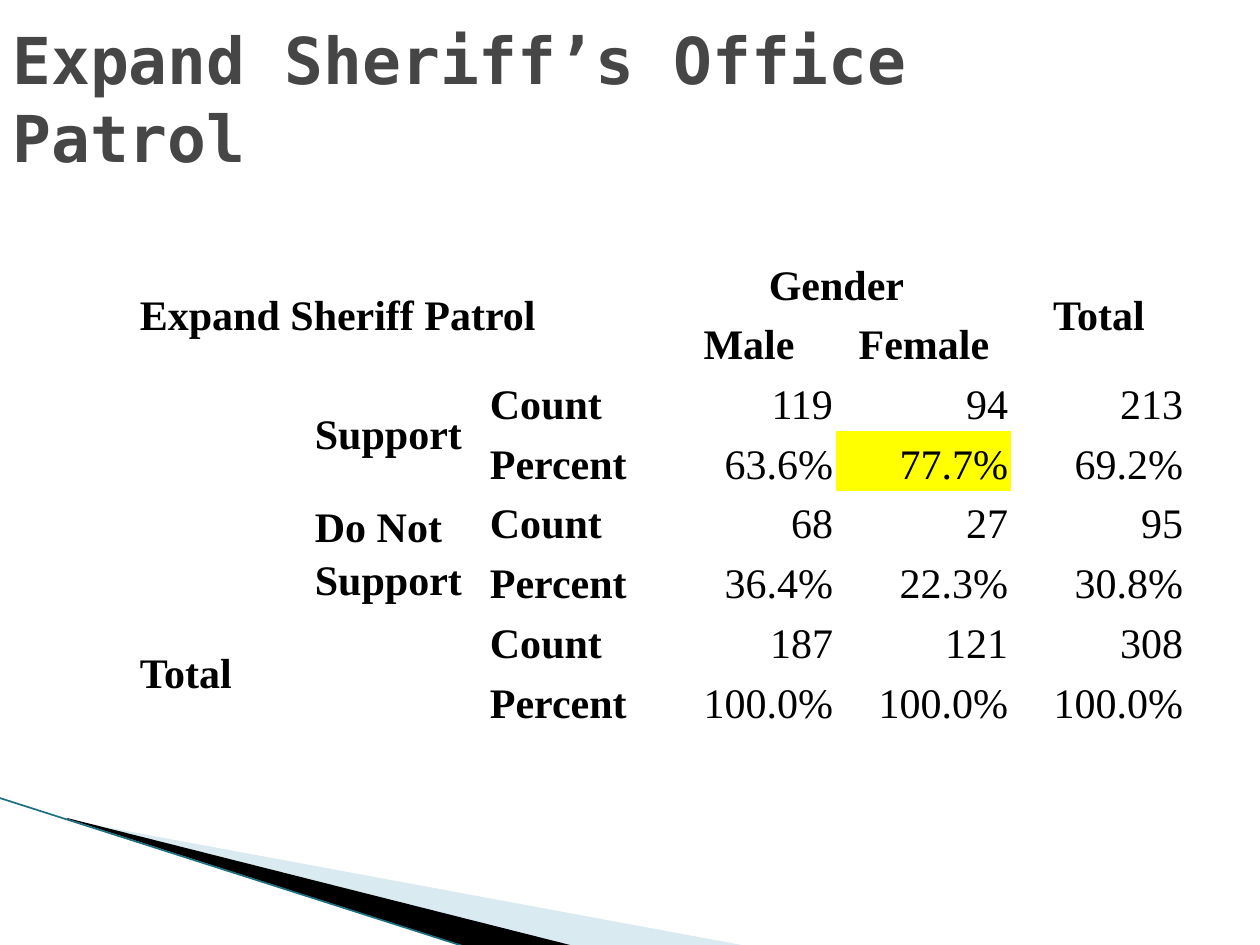
from lxml.etree import SubElement
from pptx import Presentation
from pptx.dml.color import RGBColor
from pptx.enum.shapes import MSO_CONNECTOR
from pptx.enum.text import MSO_ANCHOR, PP_ALIGN
from pptx.oxml.ns import qn
from pptx.util import Cm, Pt

LEFT, MID, RIGHT = PP_ALIGN.LEFT, PP_ALIGN.CENTER, PP_ALIGN.RIGHT
HEAD = {"name": "DejaVu Sans Mono", "size": Pt(36.9), "bold": True}
BOLD = {"name": "Times New Roman", "size": Pt(24), "bold": True}
BODY = {**BOLD, "bold": False}
CELL = {
    "margin_left": Cm(0.07),
    "margin_right": Cm(0.07),
    "margin_top": Cm(0.03),
    "margin_bottom": Cm(0),
    "vertical_anchor": MSO_ANCHOR.MIDDLE,
}
PLAIN = "{2D5ABB26-0587-4C30-8999-92F81FD0307C}"

LABELS = [
    (0, 0, 2, 3, "Expand Sheriff Patrol", LEFT),
    (0, 3, 1, 2, "Gender", MID),
    (0, 5, 2, 1, "Total", MID),
    (1, 3, 1, 1, "Male", MID),
    (1, 4, 1, 1, "Female", MID),
    (2, 0, 4, 1, "", LEFT),
    (2, 1, 2, 1, "Support", LEFT),
    (4, 1, 2, 1, "Do Not Support", LEFT),
    (6, 0, 2, 2, "Total", LEFT),
]
DATA = [
    ("Count", "119", "94", "213"),
    ("Percent", "63.6%", "77.7%", "69.2%"),
    ("Count", "68", "27", "95"),
    ("Percent", "36.4%", "22.3%", "30.8%"),
    ("Count", "187", "121", "308"),
    ("Percent", "100.0%", "100.0%", "100.0%"),
]
WEDGES = [
    ("A0CBDC", 40, [(1.4, 0.46), (15.11, 3), (11.58, 3), (1.4, 0.43)]),
    ("000000", 100, [(1.35, 0.41), (11.61, 3), (9.45, 3.02), (1.37, 0.43)]),
]


def color(code):
    """Turn a hex string into a colour."""
    return RGBColor.from_string(code)


def apply(item, form):
    """Set each format value on an item."""
    for key, value in form.items():
        setattr(item, key, value)


def write(para, text, form, ink, align=LEFT):
    """Put one styled run in a paragraph."""
    para.alignment = align
    run = para.add_run()
    run.text = text
    apply(run.font, form)
    run.font.color.rgb = color(ink)


def add_swoosh(slide, x, y):
    """Draw the wedges and thin line at the slide foot."""
    for ink, alpha, points in WEDGES:
        spots = [(x + Cm(a), y + Cm(b)) for a, b in points]
        pen = slide.shapes.build_freeform(*spots[0])
        pen.add_line_segments(spots[1:])
        wedge = pen.convert_to_shape()
        wedge.shadow.inherit = False
        wedge.fill.solid()
        wedge.fill.fore_color.rgb = color(ink)
        wedge.line.fill.background()
        tint = wedge.fill._xPr.find(qn("a:solidFill"))[0]
        SubElement(tint, qn("a:alpha"), val=str(alpha * 1000))
    edge = slide.shapes.add_connector(
        MSO_CONNECTOR.STRAIGHT, x - Cm(0.03), y, x + Cm(9.42), y + Cm(3.02))
    edge.line.color.rgb = color("1B6F80")
    edge.line.width = Pt(0.95)
    SubElement(edge._element.spPr, qn("a:effectLst"))


def add_title(slide, x, y, wide, high):
    """Place the heading in its box."""
    frame = slide.shapes.add_textbox(x, y, wide, high).text_frame
    apply(frame, {"word_wrap": True, "vertical_anchor": MSO_ANCHOR.MIDDLE})
    write(frame.paragraphs[0], "Expand Sheriff’s Office Patrol", HEAD, "464646")


def fill_cell(cell, text, form, align):
    """Write a table cell."""
    para = cell.text_frame.paragraphs[0]
    para.line_spacing = 1.15
    if text:
        write(para, text, form, "000000", align)


def add_table(slide, x, y, wide, high):
    """Build the support by gender table."""
    grid = slide.shapes.add_table(8, 6, x, y, wide, high).table
    apply(grid, {"first_row": False, "horz_banding": False})
    grid._tbl.tblPr.find(qn("a:tableStyleId")).text = PLAIN
    for cell in grid.iter_cells():
        apply(cell, CELL)
        cell.fill.background()
    for row, col, down, over, text, align in LABELS:
        cell = grid.cell(row, col)
        if down * over > 1:
            cell.merge(grid.cell(row + down - 1, col + over - 1))
        fill_cell(cell, text, BOLD, align)
    for row, (name, *values) in enumerate(DATA, 2):
        fill_cell(grid.cell(row, 2), name, BOLD, LEFT)
        for col, value in enumerate(values, 3):
            fill_cell(grid.cell(row, col), value, BODY, RIGHT)
    mark = grid.cell(3, 4).fill
    mark.solid()
    mark.fore_color.rgb = color("FFFF00")


def main():
    """Build and save the slide."""
    deck = Presentation()
    apply(deck, {"slide_width": Cm(25.4), "slide_height": Cm(19.05)})
    slide = deck.slides.add_slide(deck.slide_layouts[6])
    add_swoosh(slide, Cm(0), Cm(16.08))
    add_title(slide, Cm(0), Cm(0.76), Cm(22.86), Cm(2.41))
    add_table(slide, Cm(2.75), Cm(5.08), Cm(21.17), Cm(9.63))
    deck.save("out.pptx")


if __name__ == "__main__":
    main()
